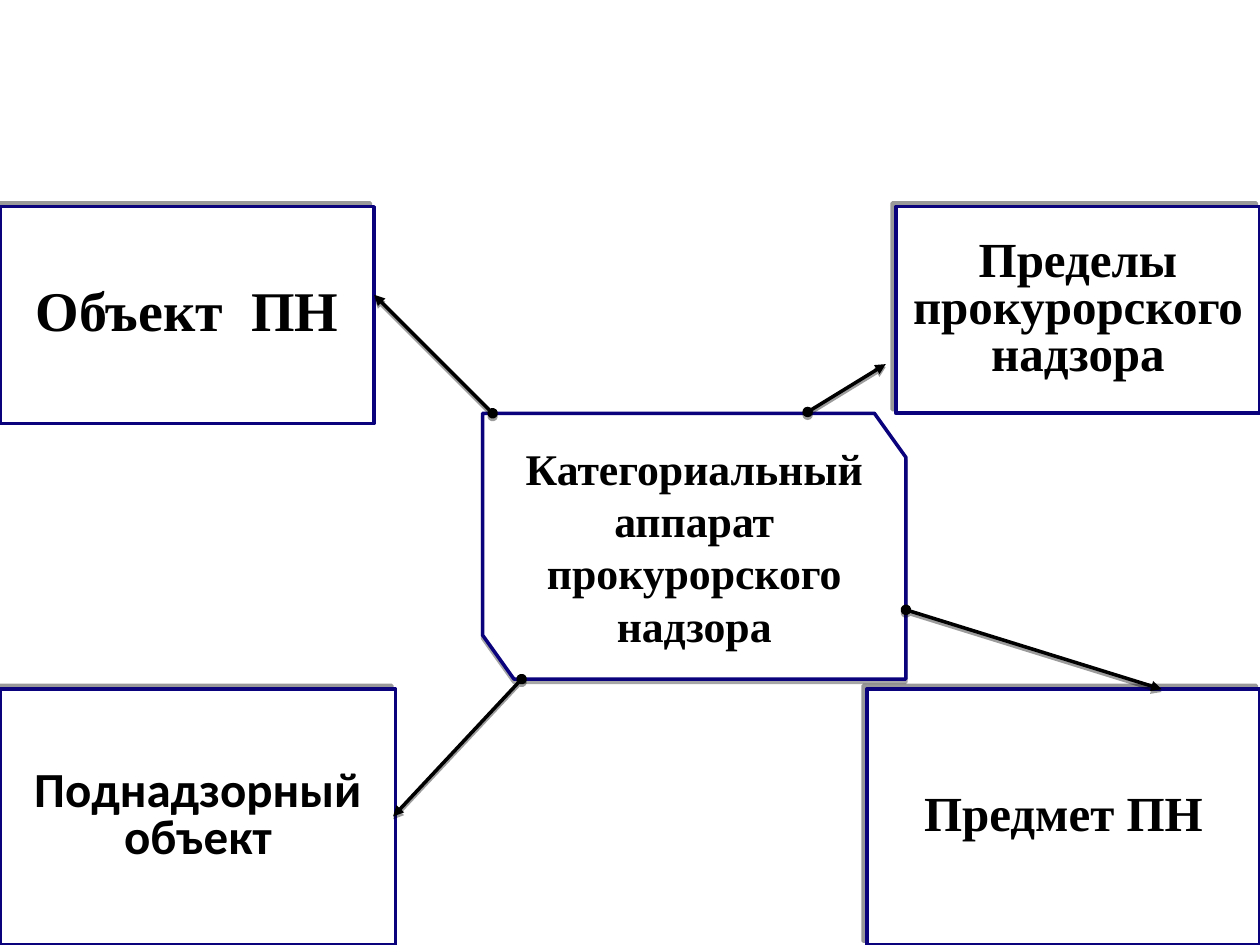
from lxml import etree
from pptx import Presentation
from pptx.dml.color import RGBColor
from pptx.enum import shapes, text
from pptx.oxml.ns import qn
from pptx.util import Inches, Pt

COLORS = {"paper": "FFFFFF", "border": "0A017D", "ink": "000000"}
SERIF, SANS = "Times New Roman", "Calibri"

CENTER = (3.83, 3.28, 3.36, 2.11)
SNIP_X, SNIP_Y = 0.25, 0.35
CENTER_LINES = ["Категориальный аппарат", "прокурорского надзора"]

# text, font, size, (left, top, width, height)
CORNERS = [
    ("Объект  ПН", SERIF, 32, (0, 1.64, 2.97, 1.72)),
    ("Поднадзорный объект", SANS, 28, (0, 5.47, 3.14, 2.03)),
    ("Предмет ПН", SERIF, 28, (6.88, 5.47, 3.12, 2.03)),
    ("Пределы прокурорского надзора", SERIF, 28, (7.11, 1.64, 2.89, 1.64)),
]
ARROWS = [
    ((7.19, 4.84), (9.22, 5.47)),
    ((3.91, 3.28), (2.97, 2.34)),
    ((4.14, 5.39), (3.12, 6.48)),
    ((6.41, 3.27), (7.03, 2.89)),
]


def color(name):
    return RGBColor.from_string(COLORS[name])


def add_shadow(shape, opacity, distance, angle):
    """Add a hard offset shadow; call it after the line has been set."""
    effects = etree.SubElement(shape._element.spPr, qn("a:effectLst"))
    shadow = etree.SubElement(
        effects, qn("a:outerShdw"), blurRad="0", dist=str(Pt(distance)),
        dir=str(angle * 60000), algn="ctr", rotWithShape="0")
    tint = etree.SubElement(shadow, qn("a:srgbClr"), val=COLORS["ink"])
    etree.SubElement(tint, qn("a:alpha"), val=str(opacity * 1000))


def set_line(shape, name):
    shape.line.color.rgb = color(name)
    shape.line.width = Pt(2)


def style_box(box, lines, font, size, spacing=None):
    box.fill.solid()
    box.fill.fore_color.rgb = color("paper")
    set_line(box, "border")
    frame = box.text_frame
    frame.word_wrap = True
    frame.vertical_anchor = text.MSO_ANCHOR.MIDDLE
    frame.text = "\n".join(lines)
    for para in frame.paragraphs:
        para.alignment = text.PP_ALIGN.CENTER
        para.line_spacing = spacing
        para.font.name = font
        para.font.size = Pt(size)
        para.font.bold = True
        para.font.color.rgb = color("ink")


def add_center(page):
    left, top, width, height = CENTER
    right, bottom = left + width, top + height
    outline = [(right - SNIP_X, top), (right, top + SNIP_Y), (right, bottom),
               (left + SNIP_X, bottom), (left, bottom - SNIP_Y)]
    builder = page.shapes.build_freeform(Inches(left), Inches(top))
    builder.add_line_segments([(Inches(x), Inches(y)) for x, y in outline])
    box = builder.convert_to_shape()
    style_box(box, CENTER_LINES, SERIF, 25)
    add_shadow(box, 35, 1.8, 90)


def add_corner(page, label, font, size, place):
    box = page.shapes.add_shape(
        shapes.MSO_SHAPE.RECTANGLE, *map(Inches, place))
    style_box(box, [label], font, size, 0.8)
    add_shadow(box, 40, 3, 225)


def add_arrow(page, start, end):
    arrow = page.shapes.add_connector(
        shapes.MSO_CONNECTOR.STRAIGHT, *map(Inches, start + end))
    set_line(arrow, "ink")
    line = arrow._element.spPr.find(qn("a:ln"))
    etree.SubElement(line, qn("a:headEnd"), type="oval")
    etree.SubElement(line, qn("a:tailEnd"), type="triangle")
    add_shadow(arrow, 38, 1.6, 90)


def main():
    deck = Presentation()
    deck.slide_width, deck.slide_height = Inches(10), Inches(7.5)
    page = deck.slides.add_slide(deck.slide_layouts[6])
    add_center(page)
    for corner in CORNERS:
        add_corner(page, *corner)
    for start, end in ARROWS:
        add_arrow(page, start, end)
    deck.save("out.pptx")


if __name__ == "__main__":
    main()
